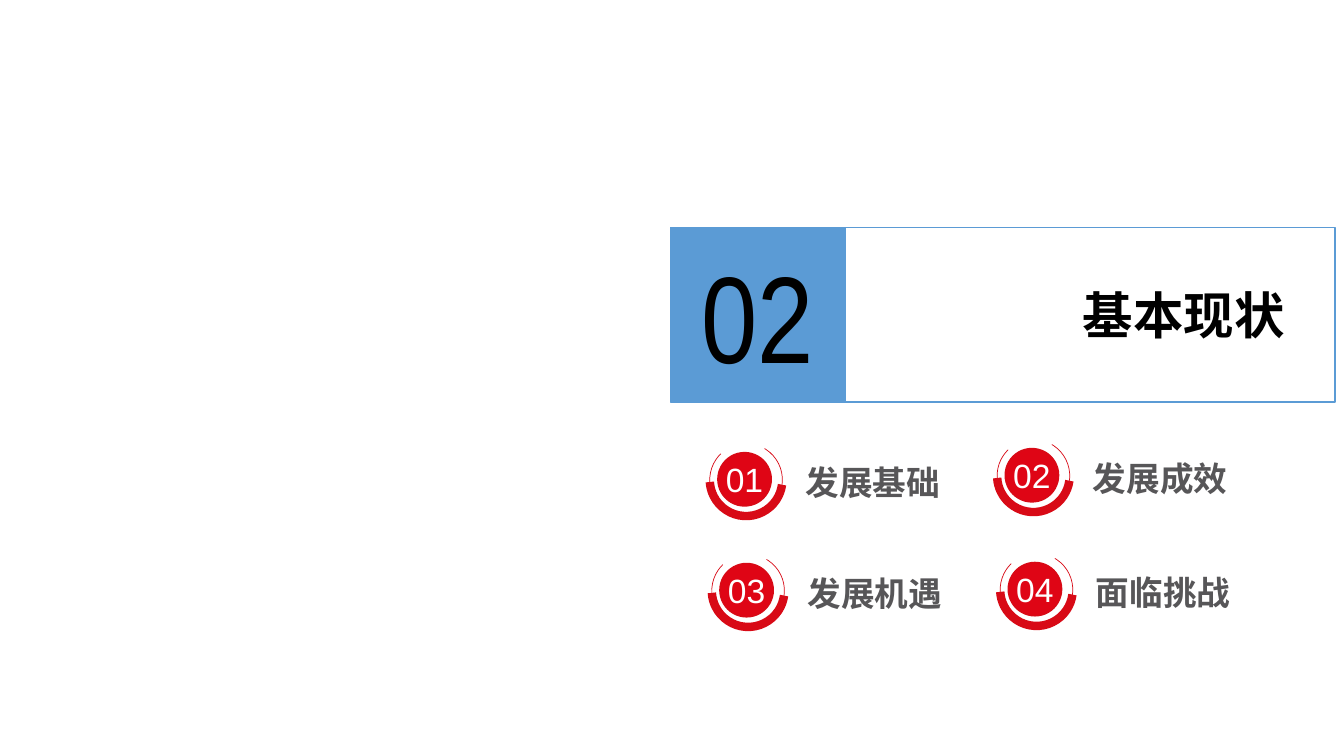
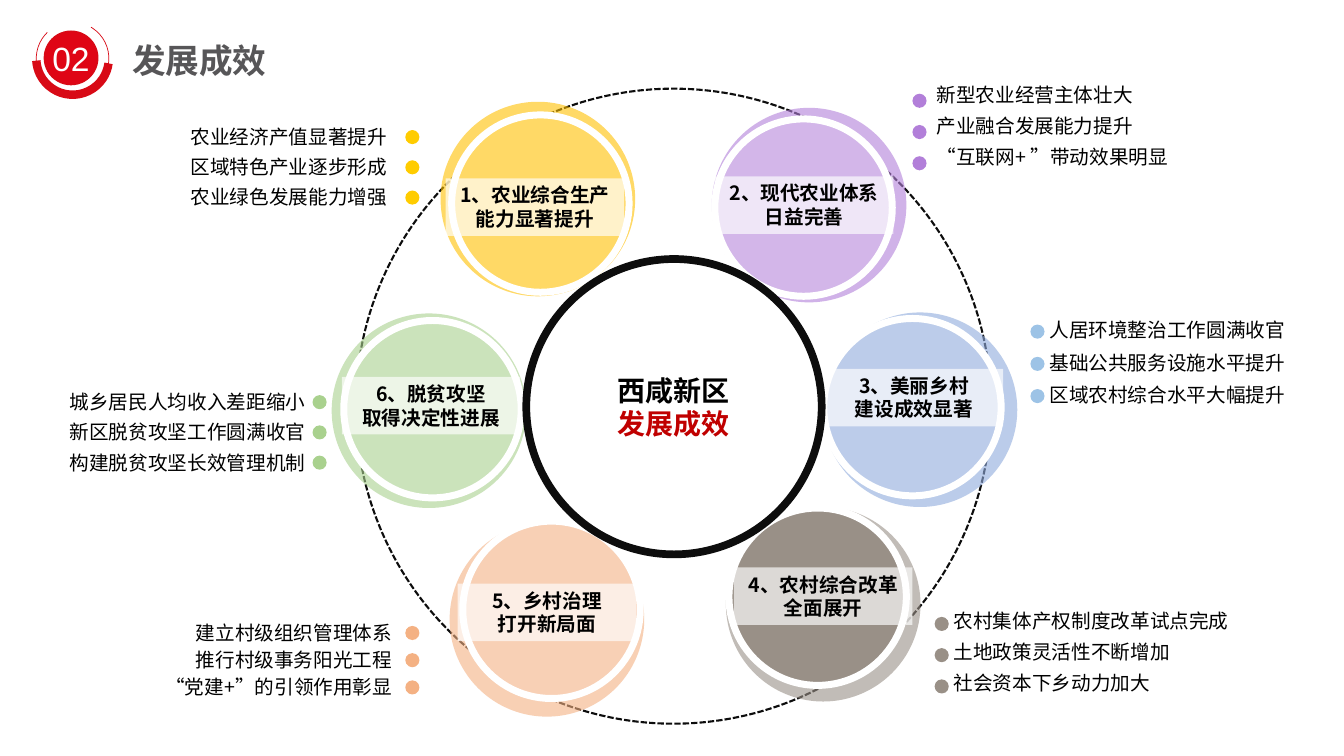
import pptx
import pptx.util
from lxml import etree
from pptx.dml.color import RGBColor
from pptx.enum.dml import MSO_LINE
from pptx.enum.shapes import MSO_SHAPE
from pptx.enum.text import MSO_ANCHOR, MSO_AUTO_SIZE, PP_ALIGN
from pptx.oxml.ns import qn

Inches, Pt = pptx.util.Inches, pptx.util.Pt
LEFT, CENTER, RIGHT = PP_ALIGN.LEFT, PP_ALIGN.CENTER, PP_ALIGN.RIGHT

BLACK = RGBColor(0x00, 0x00, 0x00)
WHITE = RGBColor(0xFF, 0xFF, 0xFF)
INK = RGBColor(0x0D, 0x0D, 0x0D)
HEADING = RGBColor(0x57, 0x56, 0x58)
BLUE = RGBColor(0x5B, 0x9B, 0xD5)
BADGE_FILL = RGBColor(0xDF, 0x05, 0x15)
BADGE_LINE = RGBColor(0xD8, 0x0A, 0x16)
ACCENT = RGBColor(0xC0, 0x00, 0x00)

SANS = "Noto Sans CJK SC"
TEXT_INSET = (0.1, 0.05)
HEADING_INSET = (0.07, 0.03)
ARC_TURN = 243.7
ARCS = [(0.5, 34.064, 205.289), (6, 74.488, 175.713)]  # line width, start, end
HALO, DISC, DOT = 1.93, 1.76, 0.14
LABEL_W, LABEL_H = 1.77, 0.57
LIST_W, LINE_H = 3.0, 0.34

SECTION = ("02", "基本现状")
CHAPTERS = [  # number, heading, left and top of the disc
    ("01", "发展基础", 7.12, 4.49),
    ("02", "发展成效", 9.97, 4.45),
    ("03", "发展机遇", 7.14, 5.59),
    ("04", "面临挑战", 10.0, 5.58),
]
# halo, disc, label: left and top. points: alignment, text edge, dot left,
# first line top, line pitch, drop from line top to dot
TOPICS = [
    dict(label=["1、农业综合生产能力显著提升"],
         halo=(4.37, 1.01), disc=(4.48, 1.14), tag=(4.42, 1.77),
         colors=("FFC000", "FFD966", "FFCC00"),
         points=(RIGHT, 3.94, 4.02, 1.19, 0.3, 0.1),
         lines=["农业经济产值显著提升", "区域特色产业逐步形成", "农业绿色发展能力增强"]),
    dict(label=["2、现代农业体系", "日益完善"],
         halo=(7.06, 1.07), disc=(7.09, 1.18), tag=(7.09, 1.75),
         colors=("B27FD9", "D3B6E9", "B27FD9"),
         points=(LEFT, 9.19, 9.05, 0.77, 0.31, 0.16),
         lines=["新型农业经营主体壮大", "产业融合发展能力提升", "“互联网+ ”带动效果明显"]),
    dict(label=["3、美丽乡村", "建设成效显著"],
         halo=(8.16, 3.1), disc=(8.17, 3.16), tag=(8.18, 3.66),
         colors=("8FAADC", "BCCCEA", "9DC3E6"),
         points=(LEFT, 10.31, 10.22, 3.11, 0.32, 0.11),
         lines=["人居环境整治工作圆满收官", "基础公共服务设施水平提升", "区域农村综合水平大幅提升"]),
    dict(label=["4、农村综合改革", "全面展开"],
         halo=(7.2, 5.03), disc=(7.23, 5.04), tag=(7.28, 5.63),
         colors=("999087", "999087", "999087"),
         points=(LEFT, 9.36, 9.27, 5.99, 0.31, 0.13),
         lines=["农村集体产权制度改革试点完成", "土地政策灵活性不断增加", "社会资本下乡动力加大"]),
    dict(label=["5、乡村治理", "打开新局面"],
         halo=(4.46, 5.18), disc=(4.59, 5.17), tag=(4.54, 5.79),
         colors=("F4B183", "F8D0B5", "F4B183"),
         points=(RIGHT, 3.99, 4.02, 6.11, 0.27, 0.1),
         lines=["建立村级组织管理体系", "推行村级事务阳光工程", "“党建+”的引领作用彰显"]),
    dict(label=["6、脱贫攻坚", "取得决定性进展"],
         halo=(3.29, 3.11), disc=(3.41, 3.18), tag=(3.39, 3.74),
         colors=("A9D18E", "CBE3BB", "A9D18E"),
         points=(RIGHT, 3.13, 3.1, 3.82, 0.3, 0.1),
         lines=["城乡居民人均收入差距缩小", "新区脱贫攻坚工作圆满收官", "构建脱贫攻坚长效管理机制"]),
]


def shape(s, kind, x, y, w, h, fill=None, line=None, width=1, opacity=None):
    sp = s.shapes.add_shape(kind, Inches(x), Inches(y), Inches(w), Inches(h))
    sp.shadow.inherit = False
    if fill is None:
        sp.fill.background()
    else:
        sp.fill.solid()
        sp.fill.fore_color.rgb = fill
    if opacity is not None:
        color = sp.fill._xPr.find(".//" + qn("a:srgbClr"))
        etree.SubElement(color, qn("a:alpha"), val=str(opacity * 1000))
    if line is None:
        sp.line.fill.background()
    else:
        sp.line.color.rgb = line
        sp.line.width = Pt(width)
    return sp


def write(sp, lines, size, color=BLACK, bold=False, align=LEFT, font=SANS,
          inset=TEXT_INSET, anchor=MSO_ANCHOR.TOP, wrap=True, grow=True):
    tf = sp.text_frame
    tf.margin_left = tf.margin_right = Inches(inset[0])
    tf.margin_top = tf.margin_bottom = Inches(inset[1])
    tf.vertical_anchor = anchor
    tf.word_wrap = wrap
    tf.auto_size = MSO_AUTO_SIZE.SHAPE_TO_FIT_TEXT if grow else MSO_AUTO_SIZE.NONE
    tf.text = "\n".join(lines)
    for p in tf.paragraphs:
        p.alignment = align
        f = p.font
        f.size, f.bold, f.name = Pt(size), bold, font
        f.color.rgb = color
        etree.SubElement(f._element, qn("a:ea"), typeface=font)


def textbox(s, x, y, w, h):
    return s.shapes.add_textbox(Inches(x), Inches(y), Inches(w), Inches(h))


def place_title(s, x, y, w, h):
    sp = s.shapes.title
    sp.left, sp.top, sp.width, sp.height = map(Inches, (x, y, w, h))
    return sp


def badge(s, number, heading, x, y, make_heading=textbox):
    """Numbered red disc inside two arcs, with a heading at its right."""
    write(make_heading(s, x + 0.8, y + 0.06, 1.58, 0.47), [heading], 24,
          HEADING, bold=True, inset=HEADING_INSET)
    disc = shape(s, MSO_SHAPE.OVAL, x, y, 0.53, 0.53, BADGE_FILL, BADGE_LINE)
    write(disc, [number], 24, WHITE, align=CENTER, font="Arial",
          anchor=MSO_ANCHOR.MIDDLE, wrap=False, grow=False)
    for width, start, end in ARCS:
        arc = shape(s, MSO_SHAPE.ARC, x - 0.08, y - 0.09, 0.72, 0.72,
                    line=BADGE_LINE, width=width)
        arc.adjustments[0], arc.adjustments[1] = start, end
        arc.rotation = ARC_TURN


def topic_circle(s, topic):
    halo, disc, _ = map(RGBColor.from_string, topic["colors"])
    shape(s, MSO_SHAPE.OVAL, *topic["halo"], HALO, HALO, halo, opacity=60)
    shape(s, MSO_SHAPE.OVAL, *topic["disc"], DISC, DISC, disc, WHITE, 5)
    tag = shape(s, MSO_SHAPE.RECTANGLE, *topic["tag"], LABEL_W, LABEL_H, WHITE, opacity=66)
    write(tag, topic["label"], 14, bold=True, align=CENTER)


def topic_points(s, topic):
    align, edge, dot_x, top, pitch, drop = topic["points"]
    x = edge - LIST_W if align == RIGHT else edge
    for i, line in enumerate(topic["lines"]):
        y = top + i * pitch
        write(textbox(s, x, y, LIST_W, LINE_H), [line], 14, align=align)
        shape(s, MSO_SHAPE.OVAL, dot_x, y + drop, DOT, DOT,
              RGBColor.from_string(topic["colors"][2]))


def section_slide(s):
    number, title = SECTION
    x, y, side = 6.65, 2.26, 1.73
    shape(s, MSO_SHAPE.RECTANGLE, x, y, side, side, BLUE, BLUE)
    shape(s, MSO_SHAPE.RECTANGLE, 7.25, y, 5.99, side, line=BLUE)
    write(textbox(s, x, 2.33, side, 1.58), [number], 88, align=CENTER,
          font="Arial Narrow", anchor=MSO_ANCHOR.MIDDLE)
    write(place_title(s, 9.76, 2.77, 3.08, 1.31), [title], 36, bold=True,
          align=RIGHT, grow=False)
    for chapter in CHAPTERS:
        badge(s, *chapter)


def results_slide(s):
    orbit = shape(s, MSO_SHAPE.OVAL, 3.53, 0.88, 6.3, 6.3, line=INK, width=1.5)
    orbit.line.dash_style = MSO_LINE.SQUARE_DOT
    orbit.line._ln.find(qn("a:prstDash")).set("val", "sysDash")
    number, heading = CHAPTERS[1][:2]
    badge(s, number, heading, 0.44, 0.31, place_title)
    for topic in TOPICS:
        topic_circle(s, topic)
        topic_points(s, topic)
    hub = shape(s, MSO_SHAPE.OVAL, 5.22, 2.57, 2.93, 2.93, line=INK, width=5.5)
    write(hub, ["西咸新区", heading], 20, bold=True, align=CENTER,
          anchor=MSO_ANCHOR.MIDDLE, grow=False)
    hub.text_frame.paragraphs[1].font.color.rgb = ACCENT


def main():
    prs = pptx.Presentation()
    prs.slide_width, prs.slide_height = Inches(13.33), Inches(7.5)
    title_only = prs.slide_layouts[5]
    for build in (section_slide, results_slide):
        build(prs.slides.add_slide(title_only))
    prs.save("out.pptx")


if __name__ == "__main__":
    main()
